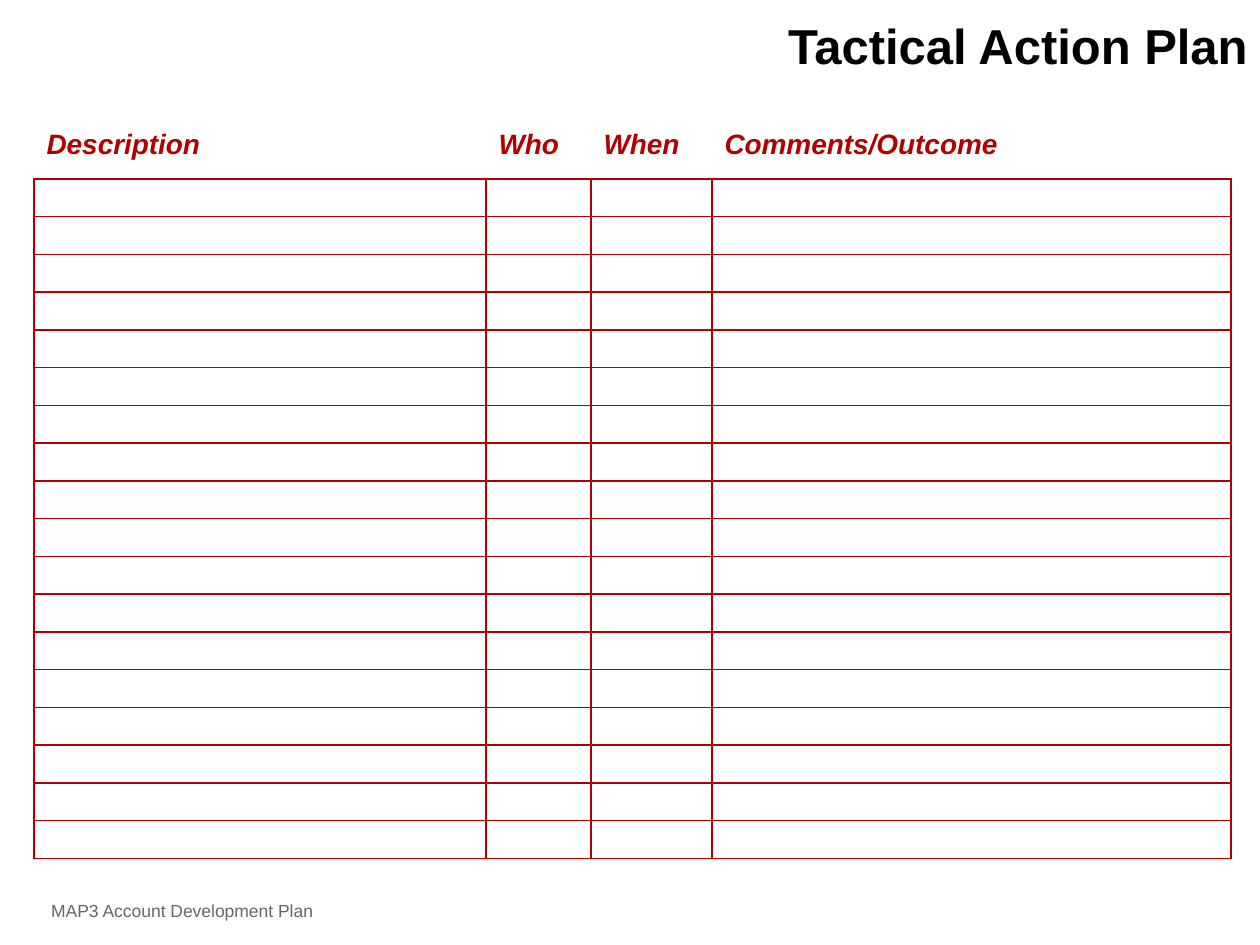
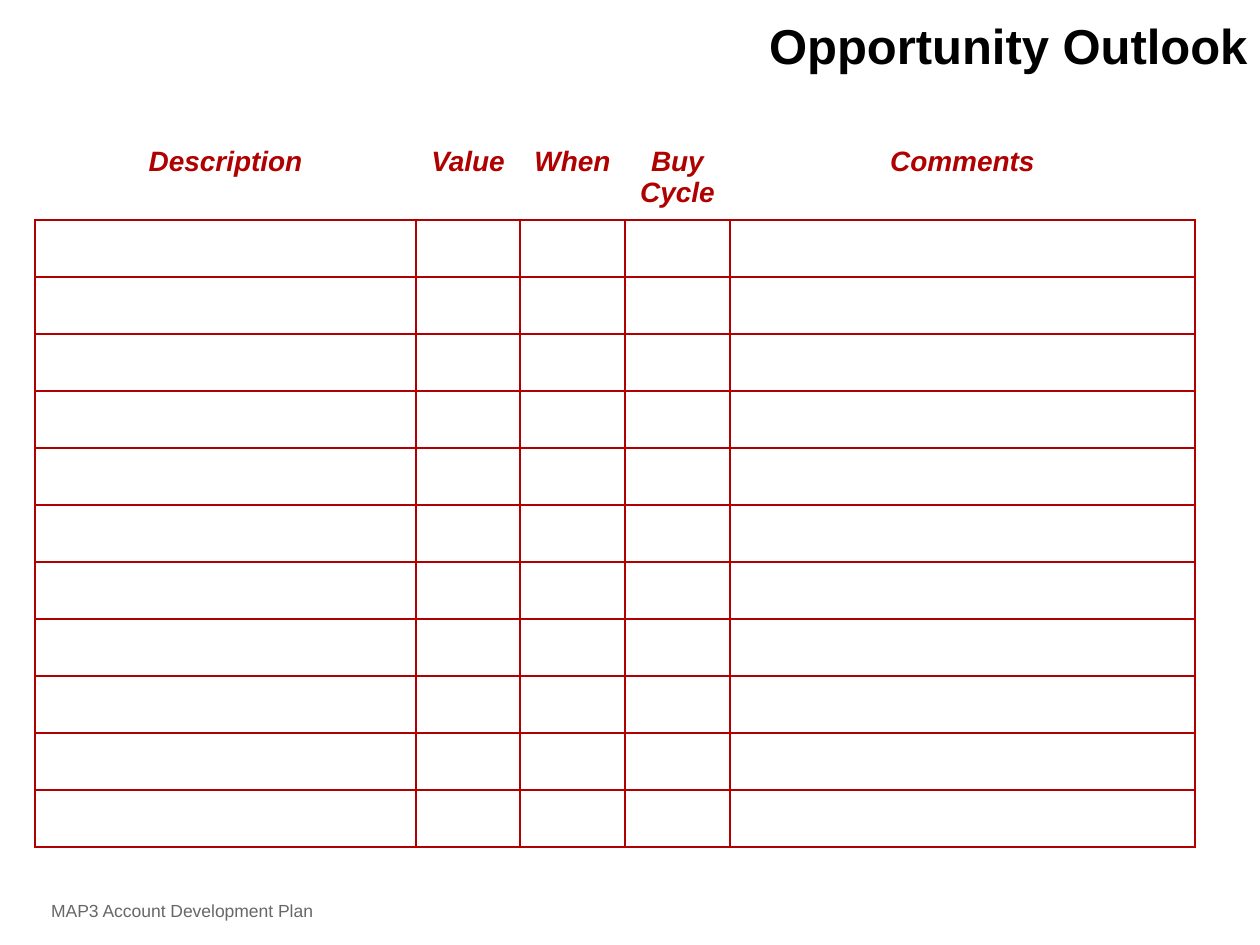
from lxml.etree import SubElement
from pptx import Presentation
from pptx.dml.color import RGBColor
from pptx.enum.text import MSO_ANCHOR, PP_ALIGN
from pptx.oxml.ns import qn
from pptx.util import Pt

PX = 7257  # EMU per px, 126 px to the inch
FONT = "Arial"
RED = RGBColor(0xB0, 0x00, 0x00)
BLACK = RGBColor(0x00, 0x00, 0x00)
GREY = RGBColor(0x67, 0x67, 0x67)
WHITE = RGBColor(0xFF, 0xFF, 0xFF)


def scale(box):
    return [n * PX for n in box]


def add_run(para, text, size, color, bold=False, italic=False):
    run = para.add_run()
    run.text = text
    font = run.font
    font.name, font.size, font.color.rgb = FONT, Pt(size), color
    font.bold, font.italic = bold, italic


def add_label(slide, box, align, wrap):
    frame = slide.shapes.add_textbox(*scale(box)).text_frame
    frame.word_wrap = wrap
    frame.vertical_anchor = MSO_ANCHOR.MIDDLE
    para = frame.paragraphs[0]
    para.alignment = align
    return para


def add_title(slide, text, box=(0, 0, 1260, 100)):
    para = add_label(slide, box, PP_ALIGN.RIGHT, False)
    para.line_spacing = 0.85
    add_run(para, text, 28, BLACK, bold=True)


def add_footer(slide, box=(0, 876, 364, 69)):
    para = add_label(slide, box, PP_ALIGN.CENTER, True)
    add_run(para, "MAP3 Account Development Plan", 10, GREY)


def set_edges(cell, drawn):
    """Rule the drawn sides in red and leave the others clear."""
    props = cell._tc.get_or_add_tcPr()
    for side in "LRTB":
        line = SubElement(props, qn(f"a:ln{side}"), w=str(Pt(1)))
        if side in drawn:
            fill = SubElement(line, qn("a:solidFill"))
            SubElement(fill, qn("a:srgbClr"), val=str(RED))
        else:
            SubElement(line, qn("a:noFill"))


def fill_head(cell, text, align):
    set_edges(cell, "B")
    cell.fill.background()
    para = cell.text_frame.paragraphs[0]
    para.alignment = align
    add_run(para, text, 16, RED, bold=True, italic=True)


def fill_blank(cell):
    set_edges(cell, "LRTB")
    cell.fill.solid()
    cell.fill.fore_color.rgb = WHITE
    # A small end mark keeps the empty row at its set height
    SubElement(cell.text_frame.paragraphs[0]._p, qn("a:endParaRPr"), sz="800")


def add_grid(slide, box, cols, head, count, align):
    """Table with a header row of height head and count equal empty rows."""
    x, y, height = box
    frame = slide.shapes.add_table(
        count + 1, len(cols), *scale((x, y, sum(width for _, width in cols), height)))
    table = frame.table
    table.first_row = table.horz_banding = False
    for i, row in enumerate(table.rows):
        row.height = (height - head) * PX // count if i else head * PX
        for cell, (name, _) in zip(row.cells, cols):
            if i:
                fill_blank(cell)
            else:
                fill_head(cell, name, align)
    for col, (_, width) in zip(table.columns, cols):
        col.width = width * PX


def add_page(deck, title, **grid):
    slide = deck.slides.add_slide(deck.slide_layouts[6])
    add_footer(slide)
    add_title(slide, title)
    add_grid(slide, **grid)


def main():
    deck = Presentation()
    deck.slide_width, deck.slide_height = scale((1260, 945))

    # Action plan
    add_page(
        deck, "Tactical Action Plan", box=(34, 123, 736), head=56, count=18,
        align=PP_ALIGN.LEFT,
        cols=[("Description", 452), ("Who", 105), ("When", 121),
              ("Comments/Outcome", 519)])

    # Outlook
    add_page(
        deck, "Opportunity Outlook", box=(35, 140, 706), head=79, count=11,
        align=PP_ALIGN.CENTER,
        cols=[("Description", 381), ("Value", 104), ("When", 105),
              ("Buy Cycle", 105), ("Comments", 465)])

    deck.save("out.pptx")


if __name__ == "__main__":
    main()
